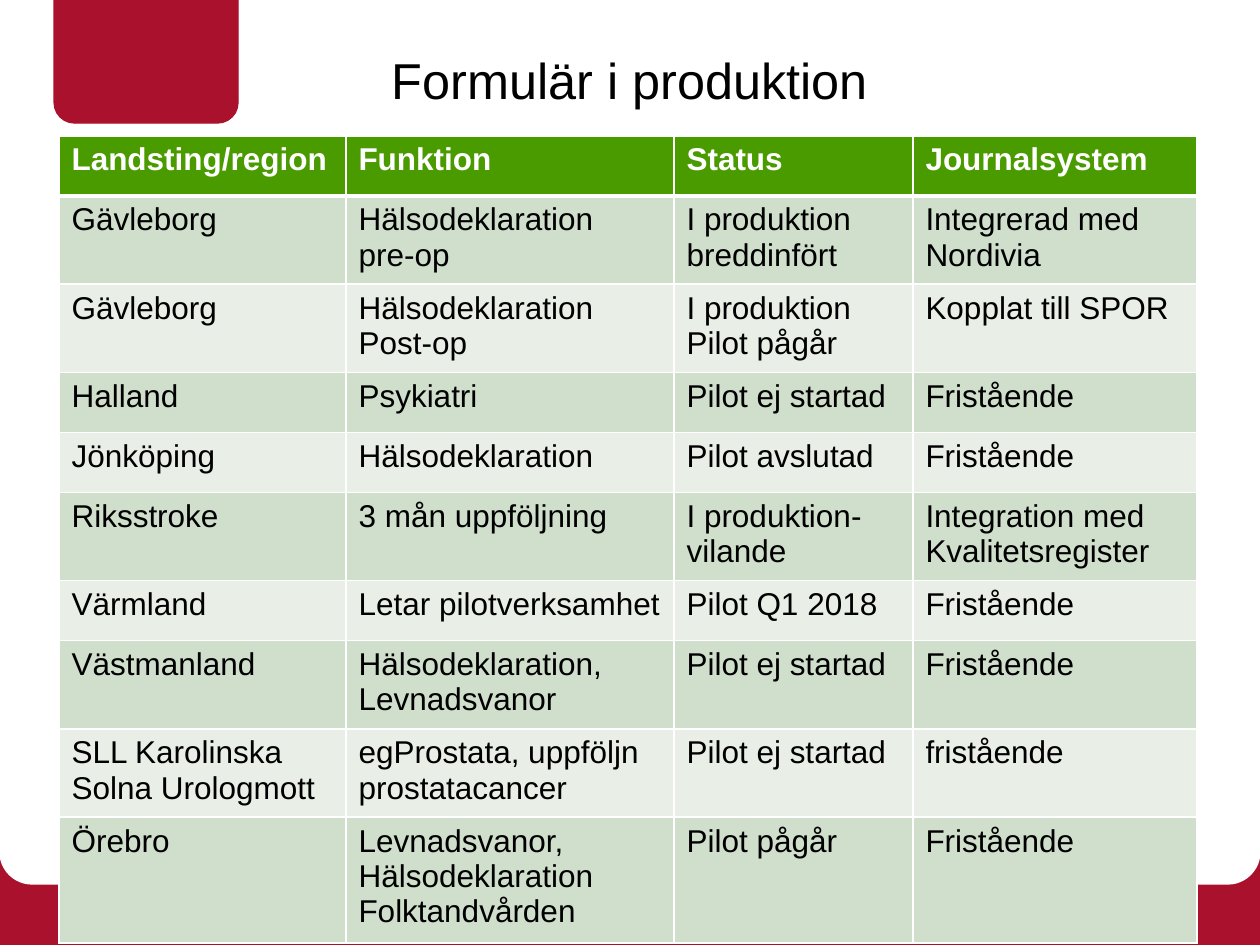
from lxml.etree import SubElement
from pptx import Presentation
from pptx.dml.color import RGBColor
from pptx.enum.shapes import MSO_SHAPE
from pptx.enum.text import MSO_ANCHOR, PP_ALIGN
from pptx.oxml.ns import qn
from pptx.util import Emu, Pt

COLORS = {
    "red": "AA112C",
    "green": "4A9B00",
    "band_dark": "D0DECC",
    "band_light": "E9EFE7",
    "white": "FFFFFF",
    "black": "000000",
}
FONT = "Arial"
COLUMN_WIDTHS = [287, 328, 239, 284]
ROW_HEIGHT = 60

# "\n" starts a new paragraph, "\v" a new line within one
ROWS = [
    ["Landsting/region", "Funktion", "Status", "Journalsystem"],
    ["Gävleborg", "Hälsodeklaration\vpre-op", "I produktion\nbreddinfört", "Integrerad med Nordivia"],
    ["Gävleborg", "Hälsodeklaration\nPost-op", "I produktion\nPilot pågår", "Kopplat till SPOR"],
    ["Halland", "Psykiatri", "Pilot ej startad", "Fristående"],
    ["Jönköping", "Hälsodeklaration", "Pilot avslutad", "Fristående"],
    ["Riksstroke", "3 mån uppföljning", "I produktion-vilande", "Integration med Kvalitetsregister"],
    ["Värmland", "Letar pilotverksamhet", "Pilot Q1 2018", "Fristående"],
    ["Västmanland", "Hälsodeklaration, Levnadsvanor", "Pilot ej startad", "Fristående"],
    ["SLL Karolinska Solna Urologmott", "egProstata, uppföljn prostatacancer",
     "Pilot ej startad", "fristående"],
    ["Örebro", "Levnadsvanor, Hälsodeklaration Folktandvården", "Pilot pågår", "Fristående"],
]


def px(length):
    return Emu(round(length * 914400 / 126))


def color(name):
    return RGBColor.from_string(COLORS[name])


def write_text(frame, text, size=18, fill="black", bold=False, align=PP_ALIGN.LEFT):
    frame.word_wrap = True
    frame.text = text
    for paragraph in frame.paragraphs:
        paragraph.alignment = align
        for run in paragraph.runs:
            run.font.name = FONT
            run.font.size = Pt(size)
            run.font.bold = bold
            run.font.color.rgb = color(fill)


def add_borders(cell, widths):
    properties = cell._tc.get_or_add_tcPr()
    for side, width in widths.items():
        line = SubElement(properties, qn(f"a:ln{side}"), w=str(Pt(width)))
        fill = SubElement(line, qn("a:solidFill"))
        SubElement(fill, qn("a:srgbClr"), val=COLORS["white"])


class SlideBuilder:
    def __init__(self, slide):
        self.slide = slide

    def shape(self, kind, left, top, width, height, fill, rotation=0, corner=None, outlined=True):
        shape = self.slide.shapes.add_shape(kind, px(left), px(top), px(width), px(height))
        shape.shadow.inherit = False
        shape.rotation = rotation
        shape.fill.solid()
        shape.fill.fore_color.rgb = color(fill)
        if outlined:
            shape.line.color.rgb = color(fill)
            shape.line.width = Pt(0.75)
        else:
            shape.line.fill.background()
        if corner is not None:
            shape.adjustments[0] = corner

    def title(self, text, left, top, width, height):
        box = self.slide.shapes.add_textbox(px(left), px(top), px(width), px(height))
        box.text_frame.vertical_anchor = MSO_ANCHOR.MIDDLE
        write_text(box.text_frame, text, size=28.8, align=PP_ALIGN.CENTER)

    def table(self, rows, left, top, widths, row_height):
        frame = self.slide.shapes.add_table(
            len(rows), len(widths), px(left), px(top), px(sum(widths)), px(row_height * len(rows)))
        table = frame.table
        for column, width in zip(table.columns, widths):
            column.width = px(width)
        for row_index, values in enumerate(rows):
            table.rows[row_index].height = px(row_height)
            header = row_index == 0
            band = "band_dark" if row_index % 2 else "band_light"
            borders = {"L": 1, "R": 1, "T": 3 if row_index == 1 else 1, "B": 3 if header else 1}
            for column_index, value in enumerate(values):
                cell = table.cell(row_index, column_index)
                add_borders(cell, borders)
                cell.fill.solid()
                cell.fill.fore_color.rgb = color("green" if header else band)
                write_text(cell.text_frame, value, fill="white" if header else "black", bold=header)


def main():
    presentation = Presentation()
    presentation.slide_width, presentation.slide_height = px(1260), px(945)
    builder = SlideBuilder(presentation.slides.add_slide(presentation.slide_layouts[6]))

    # Footer band with rounded page edge, and top tab
    builder.shape(MSO_SHAPE.RECTANGLE, 0, 842, 1260, 103, "red", outlined=False)
    builder.shape(MSO_SHAPE.ROUNDED_RECTANGLE, 0, 797, 1260, 87, "white", corner=0.37)
    builder.shape(MSO_SHAPE.ROUND_2_SAME_RECTANGLE, 54, 0, 184, 123, "red", rotation=180)

    # Title and table
    builder.title("Formulär i produktion", 63, 46, 1134, 67)
    builder.table(ROWS, 59, 136, COLUMN_WIDTHS, ROW_HEIGHT)

    presentation.save("out.pptx")


if __name__ == "__main__":
    main()
